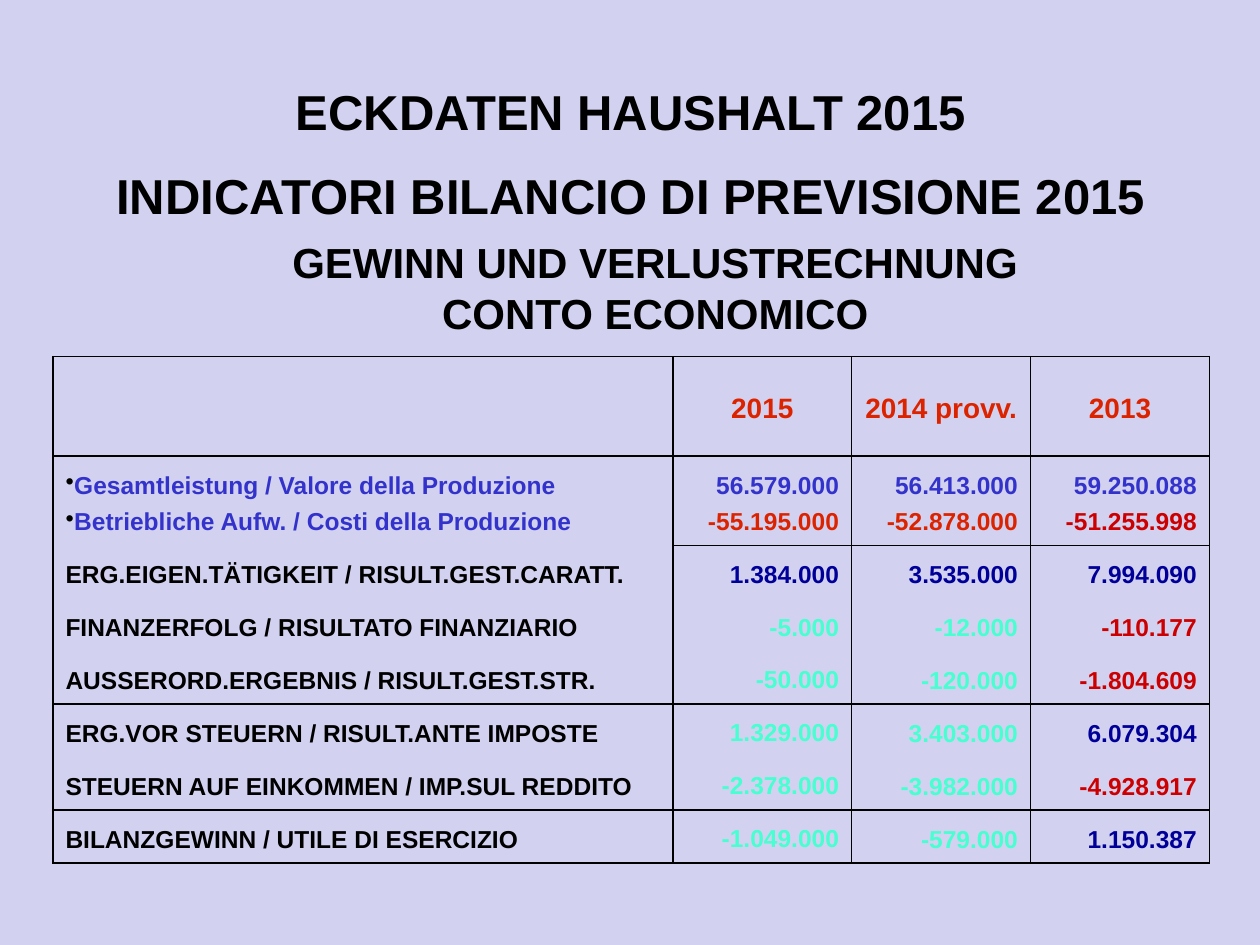
from lxml.etree import SubElement
from pptx import Presentation
from pptx.dml.color import RGBColor
from pptx.enum.text import MSO_ANCHOR, PP_ALIGN
from pptx.oxml import parse_xml
from pptx.oxml.ns import nsdecls, qn
from pptx.util import Inches, Pt

BLACK, RED, DARK_RED = "000000", "DC2300", "CC0000"
BLUE, NAVY, AQUA = "3333CC", "000099", "47FFD1"


def rgb(color):
    return RGBColor.from_string(color)


def write(tf, lines, size, align, **spacing):
    """Fill a text frame with one bold paragraph per (text, colour) pair."""
    for i, (text, color) in enumerate(lines):
        p = tf.paragraphs[0] if i == 0 else tf.add_paragraph()
        p.alignment = align
        for name, value in spacing.items():
            setattr(p, name, value)
        r = p.add_run()
        r.text = text
        for name, value in {"name": "Arial", "size": Pt(size), "bold": True}.items():
            setattr(r.font, name, value)
        r.font.color.rgb = rgb(color)


prs = Presentation()
prs.slide_width, prs.slide_height = Inches(10), Inches(7.5)
s = prs.slides.add_slide(prs.slide_layouts[5])
s.background.fill.solid()
s.background.fill.fore_color.rgb = rgb("D2D2F0")

# Title and subtitle
title = s.shapes.title
title.left, title.top, title.width, title.height = map(Inches, (0.78, 0.6, 8.45, 1.21))
subtitle = s.shapes.add_textbox(Inches(0.7), Inches(1.83), Inches(9), Inches(0.9))
headings = [
    (title, 28, ["ECKDATEN HAUSHALT 2015", "INDICATORI BILANCIO DI PREVISIONE 2015"]),
    (subtitle, 24, ["GEWINN UND VERLUSTRECHNUNG", "CONTO ECONOMICO"]),
]
for sp, size, lines in headings:
    tf = sp.text_frame
    tf.word_wrap = sp is subtitle
    tf.vertical_anchor = MSO_ANCHOR.TOP
    write(tf, [(line, BLACK) for line in lines], size, PP_ALIGN.CENTER, space_before=Pt(0))
title.text_frame.paragraphs[1].space_before = Pt(14)

# Table contents: each cell is a list of (text, colour) lines
rows = [
    [[], [("2015", RED)], [("2014 provv.", RED)], [("2013", RED)]],
    [[("Gesamtleistung / Valore della Produzione", BLUE),
      ("Betriebliche Aufw. / Costi della Produzione", BLUE)],
     [("56.579.000", BLUE), ("-55.195.000", RED)],
     [("56.413.000", BLUE), ("-52.878.000", RED)],
     [("59.250.088", BLUE), ("-51.255.998", DARK_RED)]],
]
results = [
    ("ERG.EIGEN.TÄTIGKEIT / RISULT.GEST.CARATT.", "1.384.000", "3.535.000", "7.994.090", NAVY),
    ("FINANZERFOLG / RISULTATO FINANZIARIO", "-5.000", "-12.000", "-110.177", AQUA),
    ("AUSSERORD.ERGEBNIS / RISULT.GEST.STR.", "-50.000", "-120.000", "-1.804.609", AQUA),
    ("ERG.VOR STEUERN / RISULT.ANTE IMPOSTE", "1.329.000", "3.403.000", "6.079.304", AQUA),
    ("STEUERN AUF EINKOMMEN / IMP.SUL REDDITO", "-2.378.000", "-3.982.000", "-4.928.917", AQUA),
    ("BILANZGEWINN / UTILE DI ESERCIZIO", "-1.049.000", "-579.000", "1.150.387", AQUA),
]
for label, y2015, y2014, y2013, color in results:
    color_2013 = DARK_RED if y2013.startswith("-") else NAVY
    rows.append([[(label, BLACK)], [(y2015, color)], [(y2014, color)], [(y2013, color_2013)]])

# Table grid
widths = [4.92] + [1.42] * 3
heights = [0.79, 0.71] + [0.42] * 6
table = s.shapes.add_table(len(rows), len(widths), Inches(0.42), Inches(2.83),
                           Inches(sum(widths)), Inches(sum(heights))).table
table.first_row = table.horz_banding = False
for column, width in zip(table.columns, widths):
    column.width = Inches(width)
for row, height in zip(table.rows, heights):
    row.height = Inches(height)

# Cells
cell_format = {"margin_left": Inches(0.1), "margin_right": Inches(0.1),
               "margin_top": Inches(0.08), "margin_bottom": 0,
               "vertical_anchor": MSO_ANCHOR.MIDDLE}
for i, row in enumerate(rows):
    for j, lines in enumerate(row):
        cell = table.cell(i, j)
        for name, value in cell_format.items():
            setattr(cell, name, value)
        cell.fill.background()

        # Text
        if i == 0:
            align = PP_ALIGN.CENTER
        else:
            align = PP_ALIGN.LEFT if j == 0 else PP_ALIGN.RIGHT
        tight = i > 1 and j == 1
        write(cell.text_frame, lines, 14 if i else 16, align,
              line_spacing=0.75 if tight else 0.81, space_before=Pt(0 if tight else 8))

        # Black bullets in the first body cell
        if (i, j) == (1, 0):
            for p in cell.text_frame.paragraphs:
                pPr = p._p.get_or_add_pPr()
                SubElement(SubElement(pPr, qn("a:buClr")), qn("a:srgbClr"), val=BLACK)
                SubElement(pPr, qn("a:buChar"), char="•")

        # Borders: every vertical line, horizontal lines only between groups
        ruled = {0, 1, 5, 7, 8} | ({2} if j else set())
        sides = {"lnL": True, "lnR": True, "lnT": i in ruled, "lnB": i + 1 in ruled}
        for k, (side, shown) in enumerate(sides.items()):
            paint = f'<a:solidFill><a:srgbClr val="{BLACK}"/></a:solidFill>' if shown else "<a:noFill/>"
            line = parse_xml(f'<a:{side} {nsdecls("a")} w="{Pt(1)}">{paint}</a:{side}>')
            cell._tc.get_or_add_tcPr().insert(k, line)

prs.save("out.pptx")
